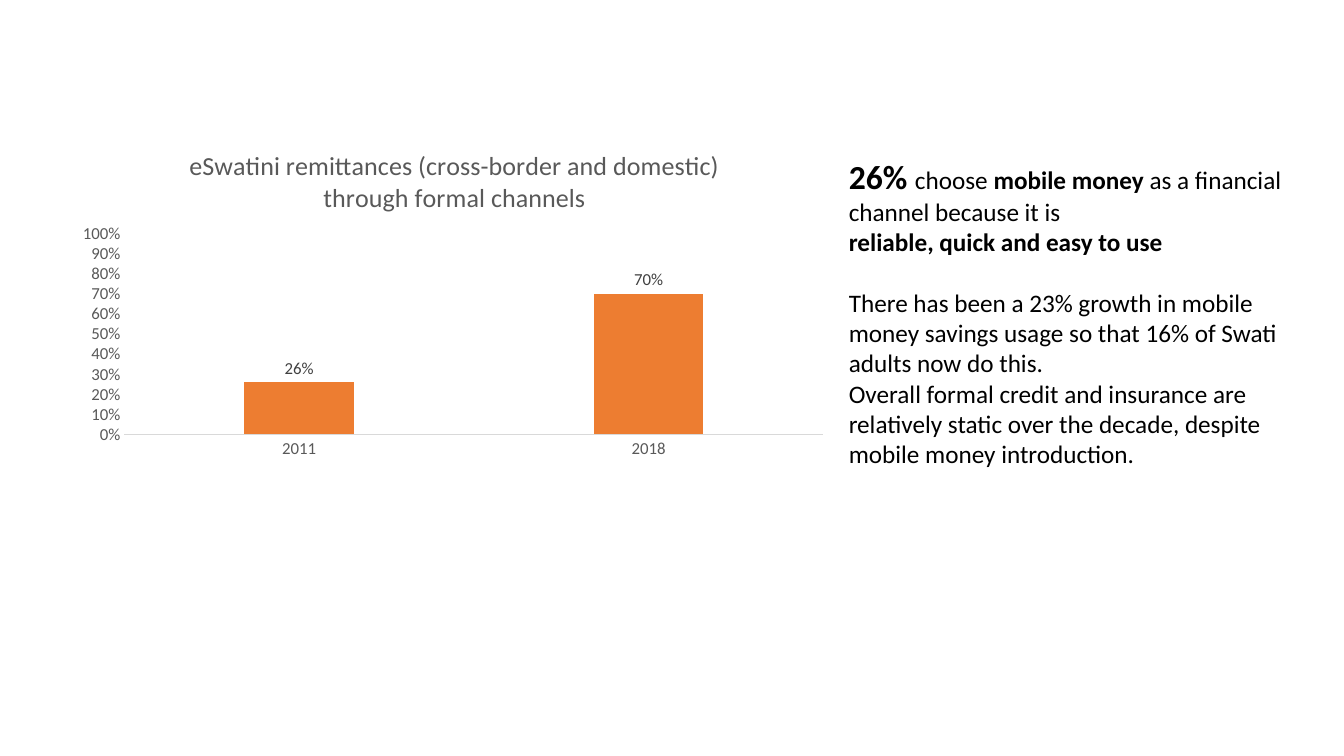
from dataclasses import dataclass
from typing import Any

from lxml.etree import SubElement
from pptx import Presentation
from pptx.chart.data import CategoryChartData
from pptx.dml.color import RGBColor
from pptx.enum.chart import XL_CHART_TYPE, XL_LABEL_POSITION, XL_TICK_MARK
from pptx.enum.text import MSO_AUTO_SIZE
from pptx.oxml.ns import qn
from pptx.util import Inches, Pt

BLACK = RGBColor(0x00, 0x00, 0x00)
GREY = RGBColor(0x59, 0x59, 0x59)
DARK_GREY = RGBColor(0x40, 0x40, 0x40)
LIGHT_GREY = RGBColor(0xD9, 0xD9, 0xD9)
ORANGE = RGBColor(0xED, 0x7D, 0x31)
FONT_NAME = "Calibri"
SLIDE_WIDTH, SLIDE_HEIGHT = Inches(13.33), Inches(7.5)


@dataclass(frozen=True)
class Area:
    left: float
    top: float
    width: float
    height: float

    def on_slide(self) -> tuple[int, int, int, int]:
        return (
            int(self.left * SLIDE_WIDTH / 100),
            int(self.top * SLIDE_HEIGHT / 100),
            int(self.width * SLIDE_WIDTH / 100),
            int(self.height * SLIDE_HEIGHT / 100),
        )


@dataclass(frozen=True)
class Span:
    text: str
    bold: bool = False
    size: float = 18


@dataclass(frozen=True)
class Message:
    spans: tuple[Span, ...]
    space_before: float = 0


CHART_AREA = Area(5.25, 17.2, 57.16, 44.27)
MESSAGE_AREA = Area(62.42, 20, 35.33, 43.07)
PLOT_SHARES = {"x": 0.07, "y": 0.31, "w": 0.91, "h": 0.6}
CHART_TITLE = "eSwatini remittances (cross-border and domestic) through formal channels"
FORMAL_SHARE = {"2011": 0.26, "2018": 0.7}
MESSAGES = (
    Message((
        Span("26% ", True, 24),
        Span("choose "),
        Span("mobile money ", True),
        Span("as a financial channel because it is"),
    )),
    Message((Span("reliable, quick and easy to use", True),)),
    Message((Span(
        "There has been a 23% growth in mobile money savings usage "
        "so that 16% of Swati adults now do this."
    ),), 21.6),
    Message((Span(
        "Overall formal credit and insurance are relatively static over "
        "the decade, despite mobile money introduction."
    ),)),
)


def set_values(target: Any, values: dict[str, Any]) -> None:
    for name, value in values.items():
        setattr(target, name, value)


def format_font(font: Any, size: float, color: RGBColor, bold: bool = False) -> None:
    set_values(font, {"name": FONT_NAME, "size": Pt(size), "bold": bold})
    font.color.rgb = color


def place_plot(plot_area: Any) -> None:
    layout = plot_area.find(qn("c:layout"))
    if layout is None:
        layout = SubElement(plot_area, qn("c:layout"))
        plot_area.insert(0, layout)
    manual = SubElement(layout, qn("c:manualLayout"))
    settings = {"layoutTarget": "inner", "xMode": "edge", "yMode": "edge", **PLOT_SHARES}
    for name, value in settings.items():
        SubElement(manual, qn(f"c:{name}")).set("val", str(value))


def add_remittance_chart(page: Any) -> None:
    data = CategoryChartData(number_format="0%")
    data.categories = list(FORMAL_SHARE)
    data.add_series("Series 1", list(FORMAL_SHARE.values()))
    chart = page.shapes.add_chart(
        XL_CHART_TYPE.COLUMN_CLUSTERED, *CHART_AREA.on_slide(), data
    ).chart
    format_font(chart.font, 10, BLACK)
    set_values(chart, {"has_legend": False, "has_title": True})
    title = chart.chart_title.text_frame
    title.text = CHART_TITLE
    format_font(title.paragraphs[0].runs[0].font, 18.6, GREY)

    for axis in (chart.category_axis, chart.value_axis):
        set_values(axis, {
            "has_major_gridlines": False,
            "major_tick_mark": XL_TICK_MARK.NONE,
            "minor_tick_mark": XL_TICK_MARK.NONE,
        })
        format_font(axis.tick_labels.font, 12, GREY)
    chart.category_axis.format.line.color.rgb = LIGHT_GREY
    chart.category_axis.format.line.width = Pt(0.75)
    set_values(chart.value_axis, {"minimum_scale": 0, "maximum_scale": 1, "major_unit": 0.1})
    set_values(chart.value_axis.tick_labels, {"number_format": "0%", "number_format_is_linked": False})
    chart.value_axis.format.line.fill.background()

    plot = chart.plots[0]
    set_values(plot, {"gap_width": 219, "overlap": -27, "vary_by_categories": False})
    series = plot.series[0]
    series.format.fill.solid()
    series.format.fill.fore_color.rgb = ORANGE
    labels = series.data_labels
    set_values(labels, {
        "show_value": True,
        "number_format": "0%",
        "number_format_is_linked": False,
        "position": XL_LABEL_POSITION.OUTSIDE_END,
    })
    format_font(labels.font, 12, DARK_GREY)
    place_plot(chart.element.find(f".//{qn('c:plotArea')}"))


def add_messages(page: Any) -> None:
    frame = page.shapes.add_textbox(*MESSAGE_AREA.on_slide()).text_frame
    set_values(frame, {"word_wrap": True, "auto_size": MSO_AUTO_SIZE.SHAPE_TO_FIT_TEXT})
    for index, message in enumerate(MESSAGES):
        para = frame.add_paragraph() if index else frame.paragraphs[0]
        if message.space_before:
            para.space_before = Pt(message.space_before)
        for span in message.spans:
            run = para.add_run()
            run.text = span.text
            format_font(run.font, span.size, BLACK, span.bold)


def main() -> None:
    deck = Presentation()
    set_values(deck, {"slide_width": SLIDE_WIDTH, "slide_height": SLIDE_HEIGHT})
    page = deck.slides.add_slide(deck.slide_layouts[6])
    add_remittance_chart(page)
    add_messages(page)
    deck.save("out.pptx")


if __name__ == "__main__":
    main()
